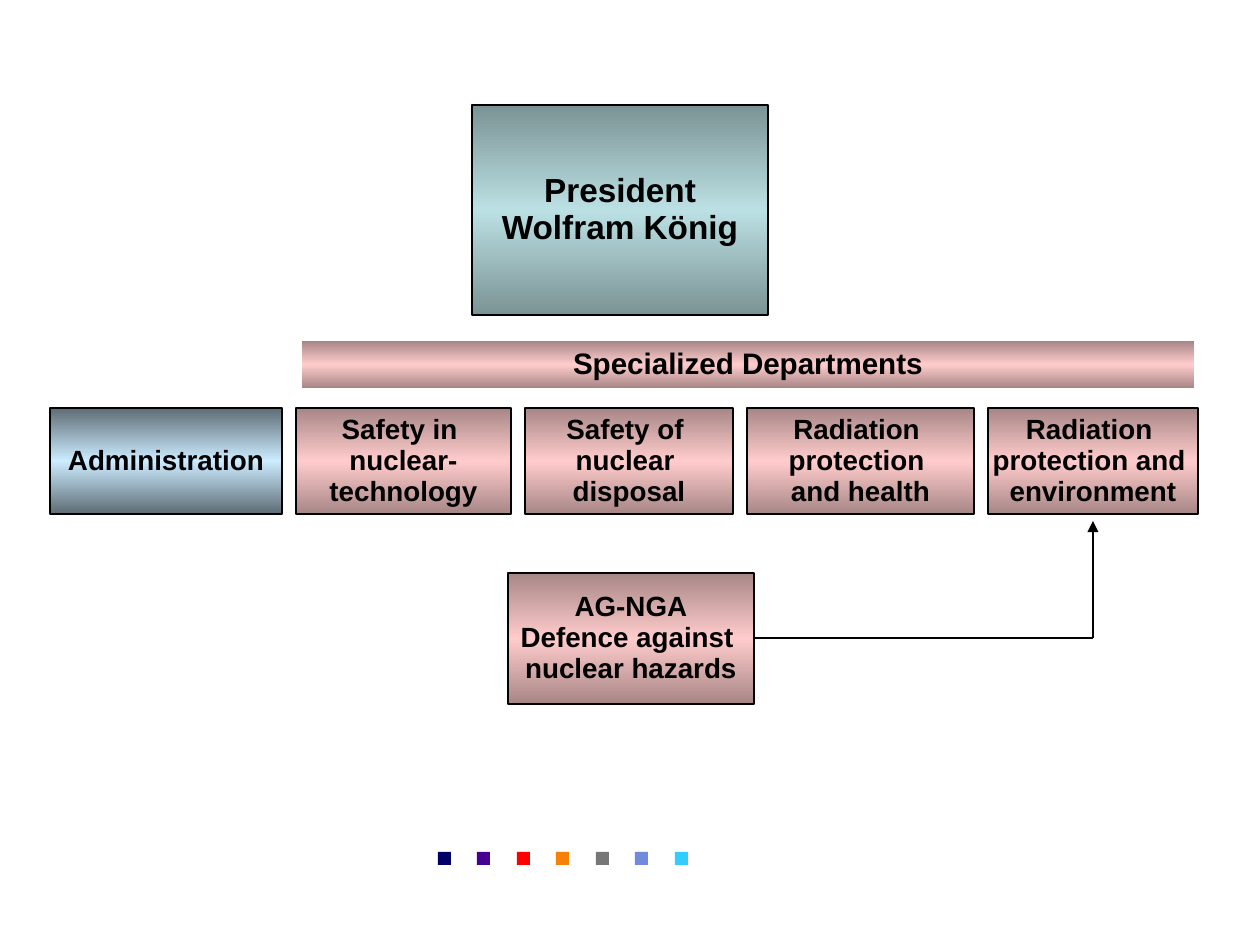
from copy import deepcopy

from lxml.etree import SubElement
from pptx import Presentation
from pptx.dml.color import RGBColor
from pptx.enum.shapes import MSO_CONNECTOR as CONNECTOR, MSO_SHAPE as SHAPE
from pptx.enum.text import MSO_ANCHOR as ANCHOR, PP_ALIGN as ALIGN
from pptx.oxml.ns import qn
from pptx.util import Emu, Pt

EMU_PER_PX = 6858
COLORS = {
    "black": "000000",
    "teal": "BBE0E3", "teal_dark": "7B9395",
    "blue": "CCECFF", "blue_dark": "5E6C75",
    "pink": "FFCCCC", "pink_dark": "A88686",
}
MARKERS = ["000066", "480090", "FF0000", "F78009", "777777", "718ADB", "33CCFF"]
UNITS = [
    (232, "blue", ["Administration"]),
    (215, "pink", ["Safety in ", "nuclear-", "technology"]),
    (208, "pink", ["Safety of ", "nuclear ", "disposal"]),
    (227, "pink", ["Radiation ", "protection ", "and health"]),
    (210, "pink", ["Radiation ", "protection and ", "environment"]),
]


def px(value):
    return Emu(value * EMU_PER_PX)


def rgb(name):
    return RGBColor.from_string(COLORS.get(name, name))


def add_rectangle(slide, left, top, width, height):
    shape = slide.shapes.add_shape(SHAPE.RECTANGLE, px(left), px(top), px(width), px(height))
    shape.shadow.inherit = False
    shape.line.fill.background()
    return shape


def fill_gradient(shape, tone):
    shape.fill.gradient()
    shape.fill.gradient_angle = 90
    stop_list = shape._element.spPr.find(".//" + qn("a:gsLst"))
    stop_list.append(deepcopy(stop_list[-1]))
    dark = tone + "_dark"
    for stop, position, color in zip(shape.fill.gradient_stops, (0, 0.5, 1), (dark, tone, dark)):
        stop.position = position
        stop.color.rgb = rgb(color)


def write_text(shape, lines, *, size=15, color="black", bold=True, font="Arial"):
    frame = shape.text_frame
    frame.word_wrap = False
    frame.vertical_anchor = ANCHOR.MIDDLE
    frame.text = "\n".join(lines)
    for paragraph in frame.paragraphs:
        paragraph.alignment = ALIGN.CENTER
        paragraph.line_spacing = 0.93
        paragraph.font.size = Pt(size)
        paragraph.font.bold = bold
        paragraph.font.name = font
        paragraph.font.color.rgb = rgb(color)


def add_unit(slide, left, top, width, height, tone, lines, *, size=15, outlined=True):
    shape = add_rectangle(slide, left, top, width, height)
    fill_gradient(shape, tone)
    if outlined:
        shape.line.color.rgb = rgb("black")
        shape.line.width = Pt(1)
    write_text(shape, lines, size=size)


def add_unit_row(slide, left, top, height, gap=14):
    for width, tone, lines in UNITS:
        add_unit(slide, left, top, width, height, tone, lines)
        left += width + gap


def add_marker_row(slide, left, top, width, size):
    for index, color in enumerate(MARKERS):
        offset = index * (width - size) // (len(MARKERS) - 1)
        marker = add_rectangle(slide, left + offset, top, size, size)
        marker.fill.solid()
        marker.fill.fore_color.rgb = rgb(color)


def add_line(slide, start, end, arrow=False):
    connector = slide.shapes.add_connector(CONNECTOR.STRAIGHT, *map(px, start + end))
    connector.line.color.rgb = rgb("black")
    connector.line.width = Pt(0.75)
    if arrow:
        SubElement(connector.line._get_or_add_ln(), qn("a:tailEnd"), type="triangle")
    SubElement(connector._element.spPr, qn("a:effectLst"))


def add_task_force(slide, left, top, width, height, target_x, target_y):
    corner = (target_x, top + height // 2)
    add_line(slide, corner, (left + width, corner[1]))
    add_line(slide, corner, (target_x, target_y), arrow=True)
    lines = ["AG-NGA", "Defence against ", "nuclear hazards"]
    add_unit(slide, left, top, width, height, "pink", lines)


def main():
    presentation = Presentation()
    presentation.slide_width = px(1260)
    presentation.slide_height = px(945)
    slide = presentation.slides.add_slide(presentation.slide_layouts[6])
    add_marker_row(slide, 438, 852, 250, 13)
    add_unit(slide, 472, 105, 296, 210, "teal", ["President", "Wolfram König"], size=18)
    add_unit_row(slide, 50, 408, 106)
    add_unit(slide, 302, 341, 892, 47, "pink", ["Specialized Departments"], size=16, outlined=False)
    add_task_force(slide, 508, 573, 246, 131, 1093, 521)
    presentation.save("out.pptx")


if __name__ == "__main__":
    main()
